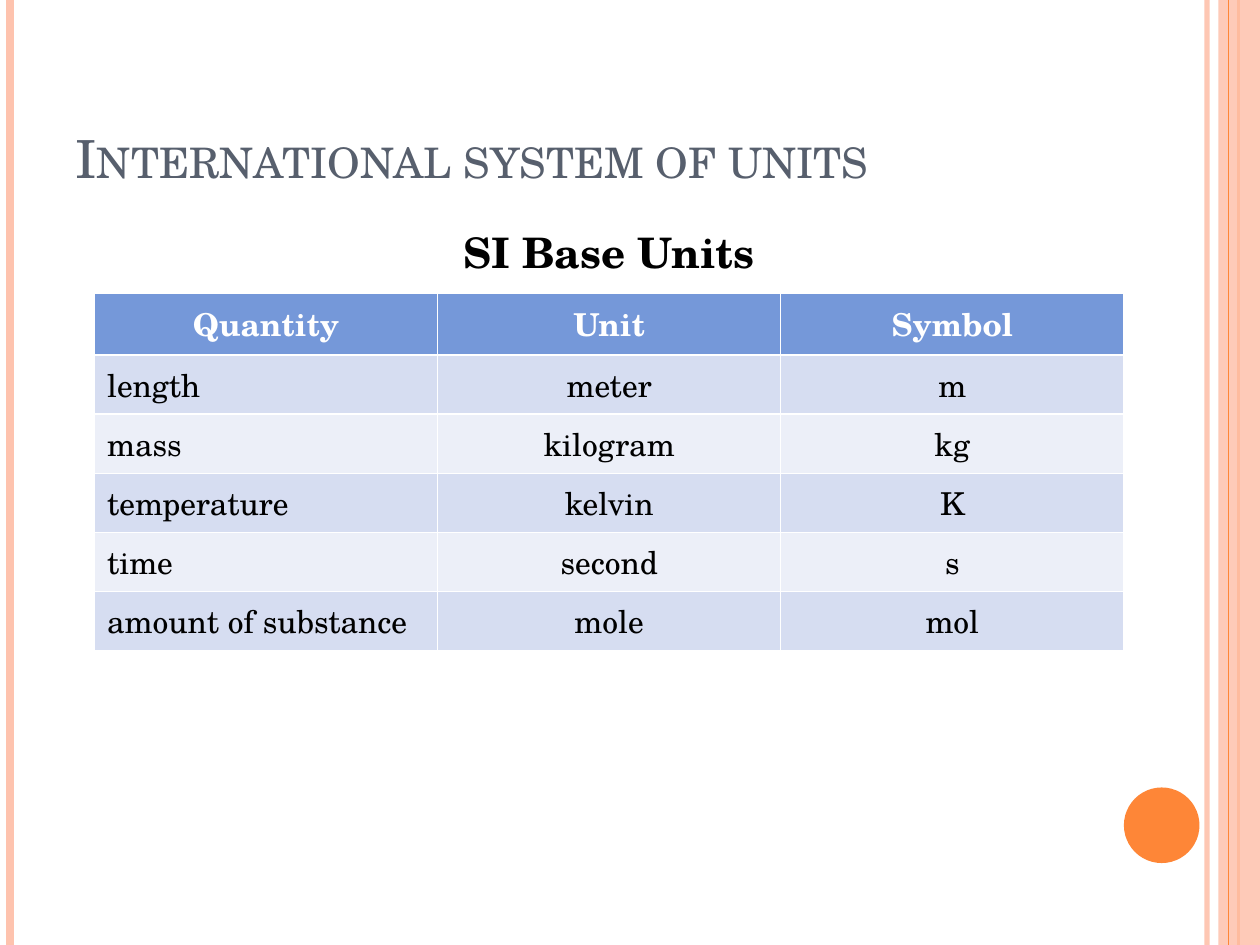
"""Build a slide with a table of the SI base units."""
from lxml import etree
from pptx import Presentation
from pptx.dml.color import RGBColor
from pptx.enum.shapes import MSO_CONNECTOR, MSO_SHAPE
from pptx.enum.text import MSO_ANCHOR, MSO_AUTO_SIZE, PP_ALIGN
from pptx.oxml.ns import qn
from pptx.util import Inches, Pt

STRAIGHT = MSO_CONNECTOR.STRAIGHT
RECTANGLE, OVAL = MSO_SHAPE.RECTANGLE, MSO_SHAPE.OVAL
BOTTOM, MIDDLE = MSO_ANCHOR.BOTTOM, MSO_ANCHOR.MIDDLE
LEFT, CENTER = PP_ALIGN.LEFT, PP_ALIGN.CENTER
NO_AUTOFIT = MSO_AUTO_SIZE.NONE

COLORS = {
    "peach": "FEC3AE", "orange": "FE8637", "slate": "575F6D",
    "header": "7598D9", "odd": "D6DDF1", "even": "ECEFF8",
    "white": "FFFFFF", "black": "000000",
}
FONT = "TeX Gyre Schola"
UNITS = [
    ("Quantity", "Unit", "Symbol"),
    ("length", "meter", "m"),
    ("mass", "kilogram", "kg"),
    ("temperature", "kelvin", "K"),
    ("time", "second", "s"),
    ("amount of substance", "mole", "mol"),
]


def paint(fill, color, opacity=100):
    fill.solid()
    fill.fore_color.rgb = RGBColor.from_string(COLORS[color])
    if opacity < 100:
        tint = fill._xPr.find(".//" + qn("a:srgbClr"))
        etree.SubElement(tint, qn("a:alpha"), val=str(opacity * 1000))


def write(frame, text, size, color, bold=False, align=LEFT):
    frame.text = text
    paragraph = frame.paragraphs[0]
    paragraph.alignment = align
    font = paragraph.runs[0].font
    for key, value in {"name": FONT, "size": Pt(size), "bold": bold}.items():
        setattr(font, key, value)
    font.color.rgb = RGBColor.from_string(COLORS[color])


prs = Presentation()
prs.slide_width, prs.slide_height = Inches(10), Inches(7.5)
slide = prs.slides.add_slide(prs.slide_layouts[5])
shapes = slide.shapes

stripes = [
    (9.58, "peach", 3, 93), (0.08, "peach", 4.5, 100),
    (9.83, "orange", 1.5, 100), (9.75, "orange", 0.75, 100),
]
for x, color, width, opacity in stripes:
    stripe = shapes.add_connector(STRAIGHT, Inches(x), 0, Inches(x), prs.slide_height)
    stripe.line.width = Pt(width)
    paint(stripe.line.fill, color, opacity)
    etree.SubElement(stripe._element.spPr, qn("a:effectLst"))
    if x == 9.83:
        band = shapes.add_shape(RECTANGLE, Inches(9.67), 0, Inches(0.33), prs.slide_height)
        paint(band.fill, "peach", 87)

dot = shapes.add_shape(OVAL, Inches(8.92), Inches(6.25), Inches(0.6), Inches(0.6))
paint(dot.fill, "orange")
for ornament in (band, dot):
    ornament.line.fill.background()
    ornament.shadow.inherit = False

title = shapes.title
title_box = {"left": 0.5, "top": 0.3, "width": 8.17, "height": 1.25}
for key, value in title_box.items():
    setattr(title, key, Inches(value))
write(title.text_frame, "International system of units", 30, "slate")
title.text_frame.auto_size = NO_AUTOFIT
title.text_frame.vertical_anchor = BOTTOM
title.text_frame.paragraphs[0].runs[0].font._element.set("cap", "small")

row_height = Inches(0.47)
units_table = shapes.add_table(
    len(UNITS), 3, Inches(0.75), Inches(2.33), Inches(8.17), row_height * len(UNITS)
).table
for r, row in enumerate(UNITS):
    units_table.rows[r].height = row_height
    band_color = "header" if r == 0 else ("even", "odd")[r % 2]
    for c, text in enumerate(row):
        cell = units_table.cell(r, c)
        cell.vertical_anchor = MIDDLE
        paint(cell.fill, band_color)
        write(cell.text_frame, text, 18, "black" if r else "white", r == 0,
              LEFT if r and c == 0 else CENTER)

caption = shapes.add_textbox(Inches(3.58), Inches(1.75), Inches(5.08), Inches(0.5))
caption.text_frame.word_wrap = True
write(caption.text_frame, "SI Base Units", 24, "black", True)

prs.save("out.pptx")
